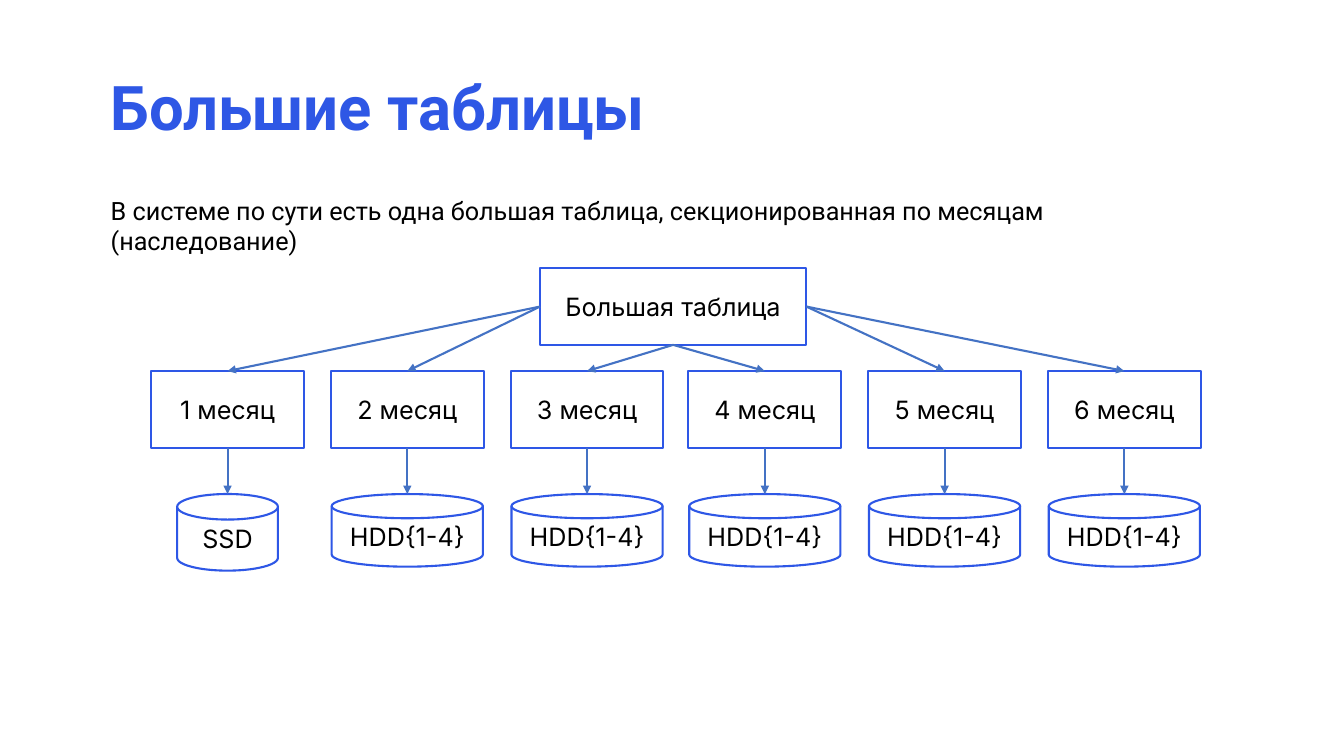
import pptx
import pptx.util
import pptx.dml.color
import pptx.enum.shapes
import pptx.enum.text
import pptx.oxml.ns
from lxml import etree

Cm, Pt = pptx.util.Cm, pptx.util.Pt
RGBColor = pptx.dml.color.RGBColor
MSO_SHAPE = pptx.enum.shapes.MSO_SHAPE
qn = pptx.oxml.ns.qn

TITLE = "Большие таблицы"
INTRO = "В системе по сути есть одна большая таблица, секционированная по месяцам (наследование)"
ROOT = "Большая таблица"
LEFT, BOTTOM, RIGHT = 1, 2, 3
MONTHS = [
    ("1 месяц", "SSD", LEFT),
    ("2 месяц", "HDD{1-4}", LEFT),
    ("3 месяц", "HDD{1-4}", BOTTOM),
    ("4 месяц", "HDD{1-4}", BOTTOM),
    ("5 месяц", "HDD{1-4}", RIGHT),
    ("6 месяц", "HDD{1-4}", RIGHT),
]
DISK_SIZES = {"SSD": (2.54, 1.93), "HDD{1-4}": (3.81, 1.83)}

TITLE_BLUE = RGBColor(0x2E, 0x57, 0xE5)
OUTLINE_BLUE = RGBColor(0x2E, 0x57, 0xE6)
ARROW_BLUE = RGBColor(0x44, 0x72, 0xC4)
BLACK = RGBColor(0, 0, 0)
WHITE = RGBColor(255, 255, 255)

GROUP_LEFTS = (3.81, 17.35)
PITCH = 4.53
MONTH_TOP, DISK_TOP = 9.35, 12.45
MONTH_W, BOX_H = 3.85, 1.93


def style_text(sp, text, font, size, color, bold=False):
    tf = sp.text_frame
    tf.word_wrap = True
    tf.text = text
    p = tf.paragraphs[0]
    f = p.runs[0].font
    f.name, f.size, f.bold = font, Pt(size), bold
    f.color.rgb = color
    return p


def add_text(box, text, size, color, bold=False):
    sp = s.shapes.add_textbox(*map(Cm, box))
    return style_text(sp, text, "Roboto", size, color, bold)


def add_node(kind, left, top, width, height, text):
    sp = s.shapes.add_shape(kind, Cm(left), Cm(top), Cm(width), Cm(height))
    sp.shadow.inherit = False
    sp.fill.solid()
    sp.fill.fore_color.rgb = WHITE
    sp.line.color.rgb = OUTLINE_BLUE
    sp.line.width = Pt(1.5)
    sp.text_frame.vertical_anchor = pptx.enum.text.MSO_ANCHOR.MIDDLE
    p = style_text(sp, text, "Inter", 18, BLACK)
    p.alignment = pptx.enum.text.PP_ALIGN.CENTER
    return sp


def add_arrow(source, side, x, y):
    c = s.shapes.add_connector(pptx.enum.shapes.MSO_CONNECTOR.STRAIGHT, 0, 0, Cm(x), Cm(y))
    c.begin_connect(source, side)
    c.line.color.rgb = ARROW_BLUE
    c.line.width = Pt(1.5)
    etree.SubElement(c.line._get_or_add_ln(), qn("a:tailEnd"), type="triangle")
    etree.SubElement(c._element.spPr, qn("a:effectLst"))
    return c


prs = pptx.Presentation()
prs.slide_width, prs.slide_height = Cm(33.87), Cm(19.05)
s = prs.slides.add_slide(prs.slide_layouts[6])

p = add_text((2.54, 1.96, 26.72, 3.43), TITLE, 44, TITLE_BLUE, True)
p.line_spacing = 0.8
add_text((2.54, 4.8, 28.8, 1.02), INTRO, 18, BLACK)

root = add_node(MSO_SHAPE.RECTANGLE, 13.61, 6.76, 6.71, BOX_H, ROOT)
for i, (month, disk, side) in enumerate(MONTHS):
    left = GROUP_LEFTS[i // 3] + i % 3 * PITCH
    center = left + MONTH_W / 2
    box = add_node(MSO_SHAPE.RECTANGLE, left, MONTH_TOP, MONTH_W, BOX_H, month)
    add_arrow(root, side, center, MONTH_TOP).end_connect(box, 0)
    width, height = DISK_SIZES[disk]
    add_node(MSO_SHAPE.FLOWCHART_MAGNETIC_DISK, center - width / 2, DISK_TOP, width, height, disk)
    add_arrow(box, BOTTOM, center, DISK_TOP)

prs.save("out.pptx")
